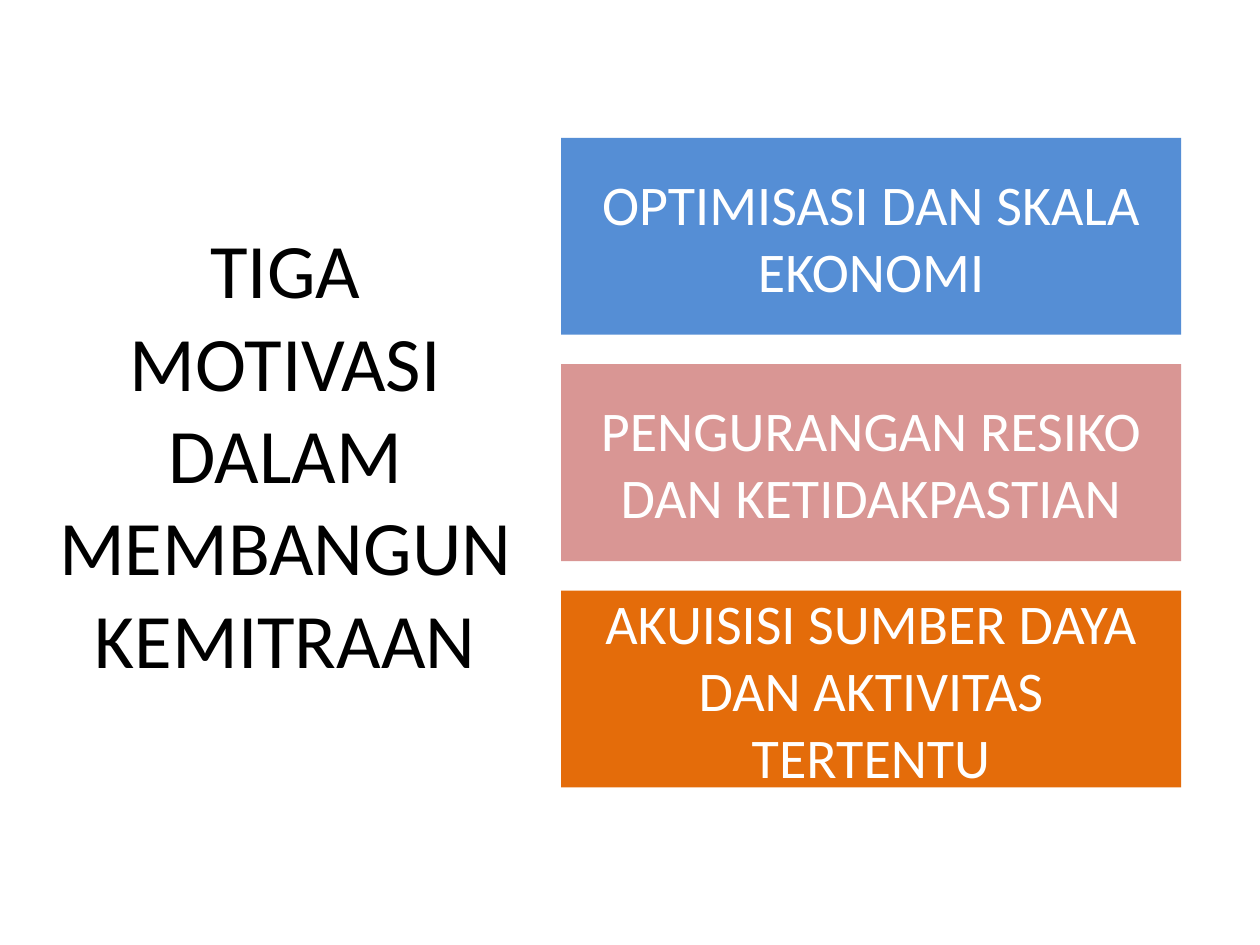
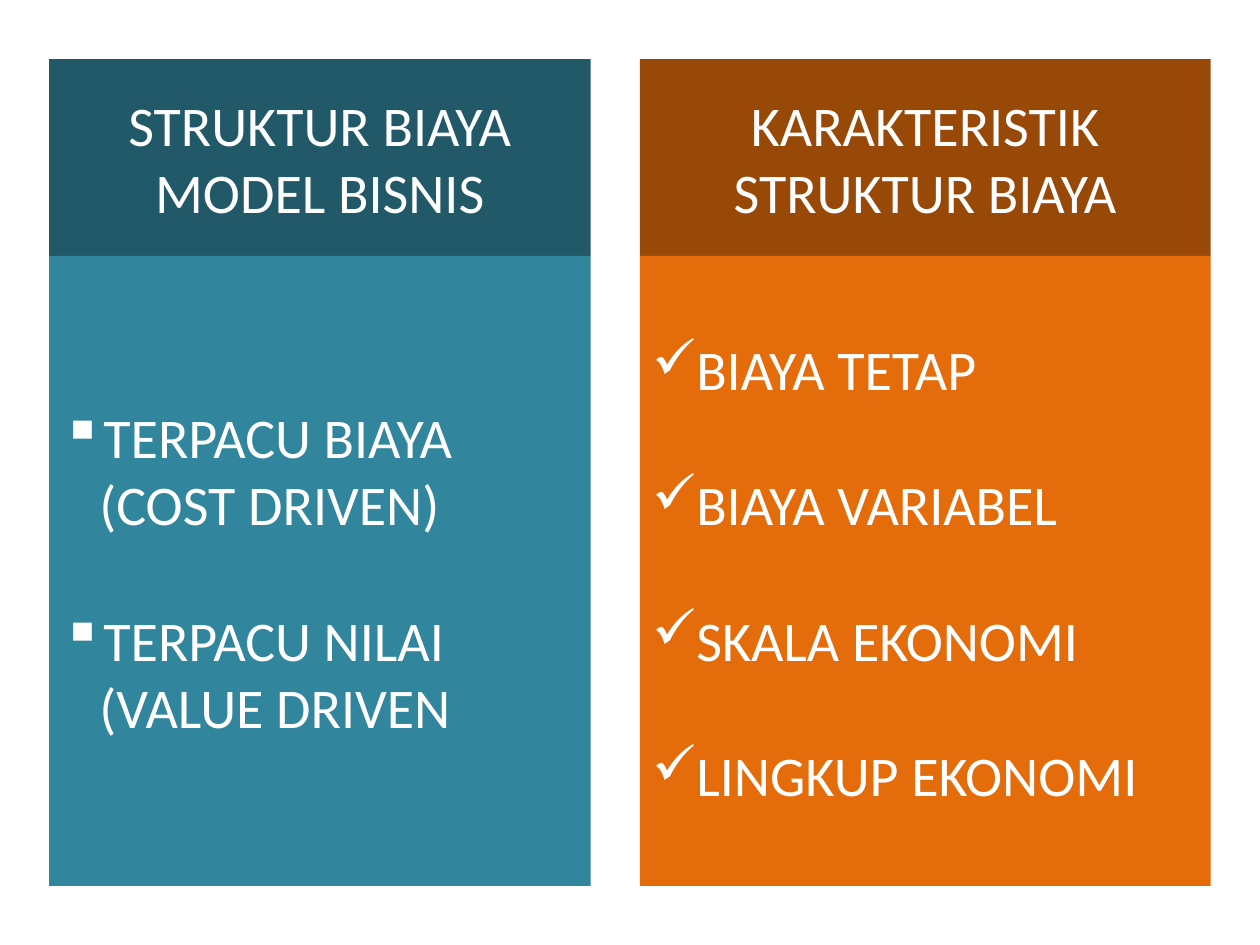
from dataclasses import dataclass

from lxml import etree
from pptx import Presentation
from pptx import util as u
from pptx.dml.color import RGBColor
from pptx.enum import shapes, text
from pptx.oxml import ns


@dataclass(frozen=True)
class Theme:
    font: str = "Calibri"
    title_size: int = 44
    body_size: int = 32
    item_gap: int = 39
    indent: float = 0.3
    black: str = "000000"
    white: str = "FFFFFF"
    blue: str = "558ED5"
    rose: str = "D99694"
    orange: str = "E46C0A"
    brown: str = "984807"
    teal: str = "31859C"
    dark_teal: str = "215968"


THEME = Theme()
WIDTH, HEIGHT = u.Inches(10), u.Inches(7.5)
COLUMNS, ROWS = 128, 96
BAND_ROWS = 20


def grid_box(column, row, columns, rows):
    across, down = WIDTH / COLUMNS, HEIGHT / ROWS
    return [round(n) for n in (column * across, row * down, columns * across, rows * down)]


def apply_format(target, values):
    for name, value in values.items():
        setattr(target, name, value)


def add_bullet(paragraph, mark):
    properties = paragraph._p.get_or_add_pPr()
    indent = u.Inches(THEME.indent)
    properties.set("marL", str(indent))
    properties.set("indent", str(-indent))
    etree.SubElement(properties, ns.qn("a:buChar")).set("char", mark)


def write_text(shape, lines, size, color, mark=None):
    frame = shape.text_frame
    apply_format(frame, {"word_wrap": True, "vertical_anchor": text.MSO_ANCHOR.MIDDLE})
    for index, line in enumerate(lines):
        paragraph = frame.add_paragraph() if index else frame.paragraphs[0]
        paragraph.alignment = text.PP_ALIGN.LEFT if mark else text.PP_ALIGN.CENTER
        if mark:
            add_bullet(paragraph, mark)
        if index:
            paragraph.space_before = u.Pt(THEME.item_gap)
        run = paragraph.add_run()
        run.text = line
        apply_format(run.font, {"name": THEME.font, "size": u.Pt(size)})
        run.font.color.rgb = RGBColor.from_string(color)


def add_title(slide, box, title):
    shape = slide.shapes.add_textbox(*grid_box(*box))
    write_text(shape, [title], THEME.title_size, THEME.black)


def add_block(slide, box, fill, lines, mark=None):
    shape = slide.shapes.add_shape(shapes.MSO_SHAPE.RECTANGLE, *grid_box(*box))
    shape.shadow.inherit = False
    shape.fill.solid()
    shape.fill.fore_color.rgb = RGBColor.from_string(fill)
    shape.line.fill.background()
    write_text(shape, lines, THEME.body_size, THEME.white, mark)


def add_panel(slide, column, columns, heading, heading_fill, items, fill, mark):
    top, body_rows = 6, 64
    add_block(slide, (column, top, columns, BAND_ROWS), heading_fill, [heading])
    add_block(slide, (column, top + BAND_ROWS, columns, body_rows), fill, items, mark)


def add_motivations(slide):
    add_title(slide, (4, 5, 50, 82), "TIGA MOTIVASI DALAM MEMBANGUN KEMITRAAN")
    motivations = [
        ("OPTIMISASI DAN SKALA EKONOMI", THEME.blue),
        ("PENGURANGAN RESIKO DAN KETIDAKPASTIAN", THEME.rose),
        ("AKUISISI SUMBER DAYA DAN AKTIVITAS TERTENTU", THEME.orange),
    ]
    first_row, gap_rows = 14, 3
    for index, (motivation, fill) in enumerate(motivations):
        row = first_row + index * (BAND_ROWS + gap_rows)
        add_block(slide, (57, row, 63, BAND_ROWS), fill, [motivation])


def add_cost_structure(slide):
    add_panel(slide, 5, 55, "STRUKTUR BIAYA MODEL BISNIS", THEME.dark_teal,
              ["TERPACU BIAYA (COST DRIVEN)", "TERPACU NILAI (VALUE DRIVEN"],
              THEME.teal, "▪")
    add_panel(slide, 65, 58, "KARAKTERISTIK STRUKTUR BIAYA", THEME.brown,
              ["BIAYA TETAP", "BIAYA VARIABEL", "SKALA EKONOMI", "LINGKUP EKONOMI"],
              THEME.orange, "✓")


def main():
    presentation = Presentation()
    apply_format(presentation, {"slide_width": WIDTH, "slide_height": HEIGHT})
    blank = presentation.slide_layouts[6]
    for fill_slide in (add_motivations, add_cost_structure):
        fill_slide(presentation.slides.add_slide(blank))
    presentation.save("out.pptx")


if __name__ == "__main__":
    main()
